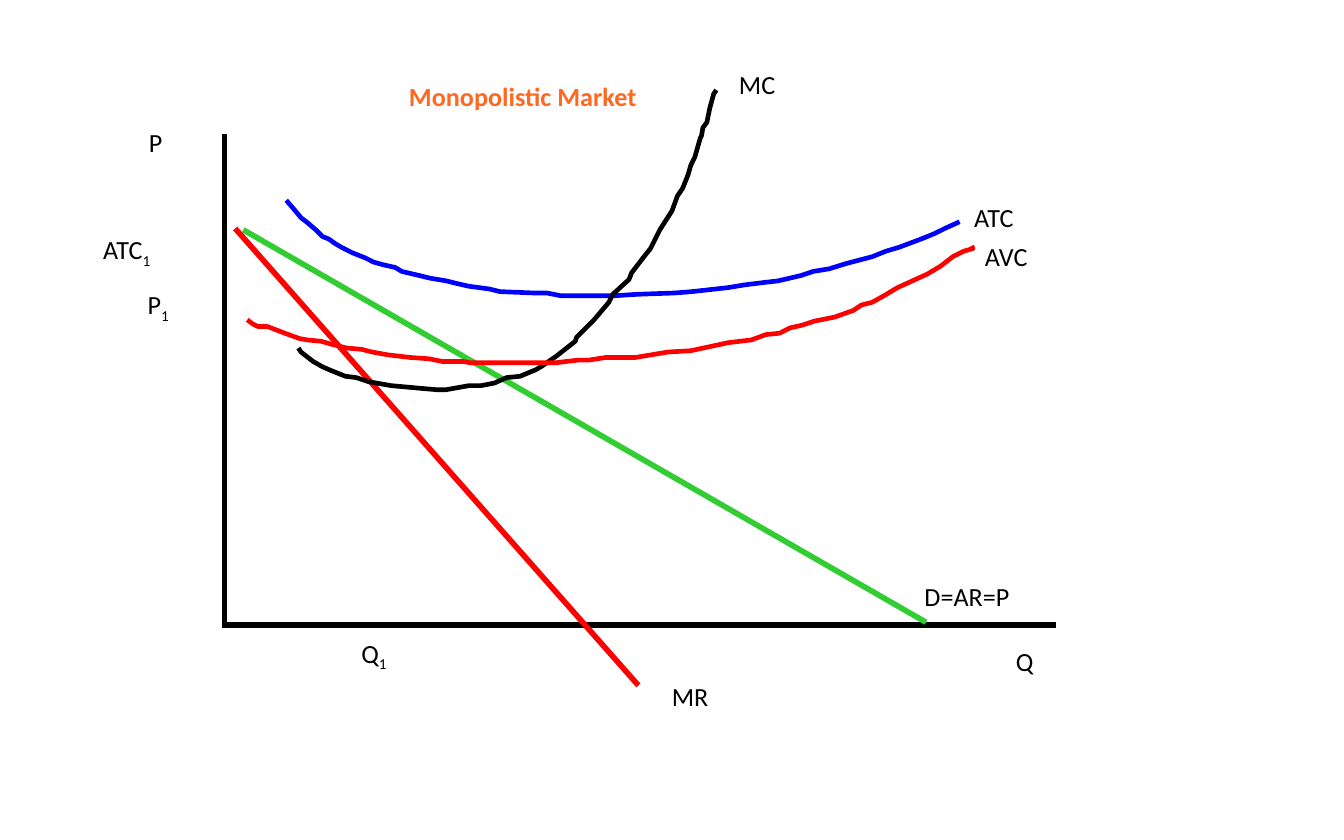
import pptx
import pptx.dml.color
import pptx.enum.shapes
import pptx.enum.text
import pptx.oxml.ns
import pptx.util
from dataclasses import dataclass
from lxml import etree


@dataclass(frozen=True)
class Theme:
    font: str = "Calibri"
    text_size: int = 14
    subscript: int = -25000
    straight_width: float = 3
    curve_width: float = 2.5
    ink: str = "000000"
    title: str = "FF6820"
    demand: str = "32CD32"
    red: str = "FF0000"
    total_cost: str = "0000FF"


THEME = Theme()

# The page is a grid of 1000 columns by 625 rows of square cells
COLUMNS, ROWS = 1000, 625
CELL = pptx.util.Inches(10) // COLUMNS

AXIS_LEFT, AXIS_BOTTOM = 167, 465
LABEL_HEIGHT = 45

# Cost curves as (column, row) points
ATC_POINTS = [
    (213, 149), (219, 156), (224, 162), (228, 165), (235, 171), (240, 176),
    (245, 178), (249, 181), (254, 184), (262, 188), (272, 192), (278, 195),
    (285, 197), (294, 199), (299, 202), (312, 205), (320, 207), (332, 209),
    (340, 211), (349, 213), (364, 215), (372, 217), (397, 218), (407, 218),
    (417, 220), (458, 220), (474, 219), (502, 218), (515, 217), (542, 214),
    (554, 212), (570, 210), (579, 209), (596, 205), (605, 202), (617, 200),
    (630, 196), (649, 191), (659, 187), (669, 184), (677, 181), (685, 178),
    (695, 174), (703, 170), (714, 165),
]
MC_POINTS = [
    (222, 259), (224, 262), (233, 269), (240, 273), (247, 276), (257, 280),
    (265, 281), (274, 284), (291, 287), (313, 289), (325, 290), (332, 290),
    (349, 287), (358, 287), (368, 285), (377, 281), (387, 280), (399, 275),
    (404, 272), (414, 265), (428, 254), (429, 251), (442, 238), (453, 225),
    (456, 219), (468, 208), (470, 203), (480, 190), (484, 185), (491, 171),
    (500, 157), (504, 146), (508, 140), (512, 130), (514, 123), (517, 117),
    (521, 103), (522, 101), (523, 95), (526, 91), (528, 81), (531, 70),
    (533, 67),
]
AVC_POINTS = [
    (184, 238), (188, 241), (192, 243), (199, 243), (212, 248), (223, 252),
    (229, 253), (239, 254), (246, 256), (258, 259), (269, 260), (277, 262),
    (288, 264), (305, 266), (319, 267), (329, 269), (345, 269), (350, 270),
    (413, 270), (430, 268), (438, 268), (451, 266), (473, 266), (485, 264),
    (497, 262), (514, 261), (528, 258), (542, 255), (559, 253), (570, 249),
    (580, 248), (588, 244), (597, 242), (606, 239), (621, 236), (635, 231),
    (641, 227), (649, 225), (658, 220), (668, 214), (690, 204), (700, 198),
    (709, 191), (717, 187), (724, 185), (723, 183),
]

# Labels: text, subscript, left, top, width
LABELS = [
    ("P", "", 101, 89, 81),
    ("ATC", "1", 67, 169, 114),
    ("P", "1", 100, 210, 75),
    ("Q", "1", 259, 469, 79),
    ("Q", "", 746, 475, 79),
    ("D=AR=P", "", 678, 427, 189),
    ("MR", "", 490, 501, 99),
    ("ATC", "", 715, 145, 99),
    ("AVC", "", 723, 174, 107),
    ("MC", "", 540, 46, 91),
]


def rgb(code):
    return pptx.dml.color.RGBColor.from_string(code)


def style_line(shape, color, width):
    shape.line.color.rgb = rgb(color)
    shape.line.width = pptx.util.Pt(width)


def add_straight(page, start, end, color):
    line = page.shapes.add_connector(
        pptx.enum.shapes.MSO_CONNECTOR.STRAIGHT,
        *(value * CELL for value in (*start, *end)))
    style_line(line, color, THEME.straight_width)
    etree.SubElement(line._element.spPr, pptx.oxml.ns.qn("a:effectLst"))


def add_curve(page, points, color):
    builder = page.shapes.build_freeform(*points[0], scale=CELL)
    builder.add_line_segments(points[1:], close=False)
    curve = builder.convert_to_shape()
    curve.shadow.inherit = False
    curve.fill.background()
    style_line(curve, color, THEME.curve_width)


def add_span(para, text, color=THEME.ink, bold=False, baseline=None):
    span = para.add_run()
    span.text = text
    span.font.name = THEME.font
    span.font.size = pptx.util.Pt(THEME.text_size)
    span.font.bold = bold
    span.font.color.rgb = rgb(color)
    if baseline is not None:
        span._r.get_or_add_rPr().set("baseline", str(baseline))


def add_text(page, text, left, top, width, height=LABEL_HEIGHT,
             subscript="", centered=False, **span_format):
    box = page.shapes.add_textbox(
        *(value * CELL for value in (left, top, width, height)))
    box.text_frame.word_wrap = True
    para = box.text_frame.paragraphs[0]
    if centered:
        para.alignment = pptx.enum.text.PP_ALIGN.CENTER
    add_span(para, text, **span_format)
    if subscript:
        add_span(para, subscript, baseline=THEME.subscript, **span_format)


def main():
    deck = pptx.Presentation()
    deck.slide_width, deck.slide_height = COLUMNS * CELL, ROWS * CELL
    page = deck.slides.add_slide(deck.slide_layouts[6])

    # Axes
    add_straight(page, (AXIS_LEFT, 100), (AXIS_LEFT, AXIS_BOTTOM), THEME.ink)
    add_straight(page, (165, AXIS_BOTTOM), (786, AXIS_BOTTOM), THEME.ink)

    # Demand and marginal revenue
    add_straight(page, (181, 171), (689, 463), THEME.demand)
    add_straight(page, (175, 170), (475, 510), THEME.red)

    # Cost curves
    add_curve(page, ATC_POINTS, THEME.total_cost)
    add_curve(page, MC_POINTS, THEME.ink)
    add_curve(page, AVC_POINTS, THEME.red)

    # Title and labels
    add_text(page, "Monopolistic Market", 269, 55, 240, height=76,
             centered=True, color=THEME.title, bold=True)
    for text, subscript, left, top, width in LABELS:
        add_text(page, text, left, top, width, subscript=subscript)

    deck.save("out.pptx")


if __name__ == "__main__":
    main()
